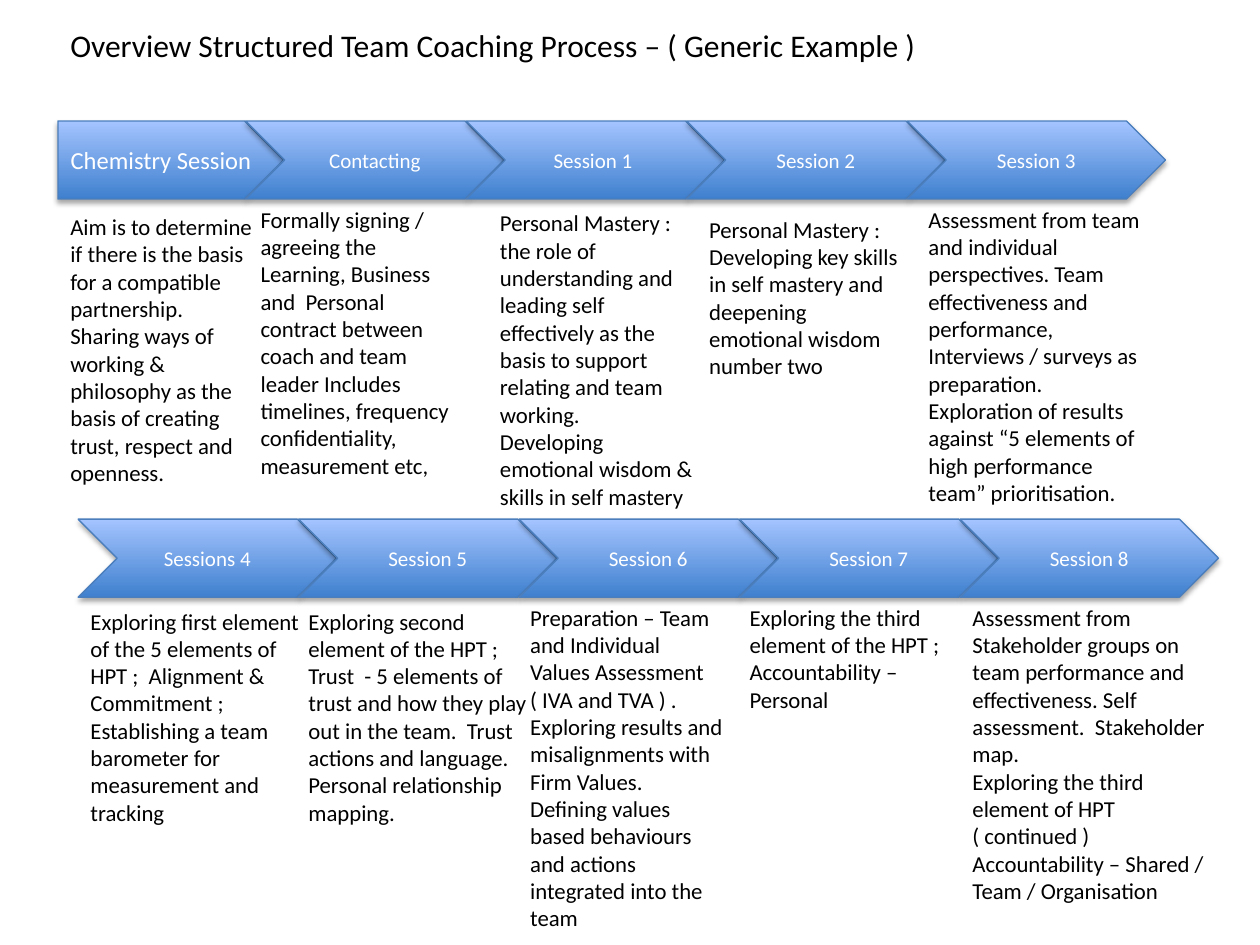
from lxml import etree
from pptx import Presentation
from pptx.dml.color import RGBColor
from pptx.enum.shapes import MSO_SHAPE
from pptx.enum.text import MSO_ANCHOR, MSO_AUTO_SIZE, PP_ALIGN
from pptx.oxml.ns import qn
from pptx.util import Inches, Pt

PENTAGON, CHEVRON = MSO_SHAPE.PENTAGON, MSO_SHAPE.CHEVRON
MIDDLE, CENTER = MSO_ANCHOR.MIDDLE, PP_ALIGN.CENTER
GROW = MSO_AUTO_SIZE.SHAPE_TO_FIT_TEXT

FONT = "Calibri"
COLORS = {
    "text": "000000",
    "label": "FFFFFF",
    "arrow_bottom": "3F80CE",
    "arrow_top": "A4C4FF",
    "outline": "4B7EBC",
    "shadow": "000000",
}

ARROW_WIDTH, ARROW_HEIGHT = 2.05, 0.62
ARROW_STEP = 1.75

# Each step: label, (left, top, width, height) of its description, paragraphs
FIRST_ROW = [
    ("Chemistry Session", (0.46, 1.64, 1.64, 2.51), [
        "Aim is to determine if there is the basis for a compatible partnership.  "
        "Sharing ways of working & philosophy as the basis of creating trust, "
        "respect and openness."]),
    ("Contacting", (1.97, 1.58, 1.73, 2.29), [
        "Formally signing / agreeing the Learning, Business and  Personal contract "
        "between coach and team leader Includes timelines, frequency "
        "confidentiality,  measurement etc,"]),
    ("Session 1 ", (3.87, 1.61, 1.73, 2.51), [
        "Personal Mastery :  the role of understanding and leading self effectively "
        "as the basis to support relating and team working.",
        "Developing emotional wisdom & skills in self mastery"]),
    ("Session 2", (5.53, 1.66, 1.73, 1.41), [
        "Personal Mastery :",
        "Developing key skills in self mastery and deepening emotional wisdom "
        "number two"]),
    ("Session 3", (7.27, 1.58, 1.92, 2.51), [
        "Assessment from team and individual perspectives. Team effectiveness and "
        "performance, Interviews / surveys as preparation.",
        "Exploration of results against “5 elements of high performance team” "
        "prioritisation."]),
]
SECOND_ROW = [
    ("Sessions 4", (0.62, 4.77, 1.87, 1.85), [
        "Exploring first element of the 5 elements of HPT ;  Alignment & "
        "Commitment ; Establishing a team barometer for measurement and tracking"]),
    ("Session 5", (2.35, 4.77, 1.94, 1.85), [
        "Exploring second element of the HPT ; Trust  - 5 elements of trust and how "
        "they play out in the team.  Trust actions and language.  Personal "
        "relationship mapping."]),
    ("Session 6", (4.11, 4.74, 1.73, 2.73), [
        "Preparation – Team and Individual Values Assessment ( IVA and TVA ) .  "
        "Exploring results and misalignments with Firm Values.  Defining values "
        "based behaviours and actions integrated into the team"]),
    ("Session 7", (5.85, 4.74, 1.75, 0.98), [
        "Exploring the third element of the HPT ; Accountability – Personal"]),
    ("Session 8", (7.62, 4.74, 2.04, 2.51), [
        "Assessment from Stakeholder groups on team performance and effectiveness. "
        "Self assessment.  Stakeholder map.",
        "Exploring the third element of HPT ( continued ) Accountability – Shared / "
        "Team / Organisation"]),
]


def color(name):
    return RGBColor.from_string(COLORS[name])


def style_paragraph(para, size, color_name):
    para.font.name = FONT
    para.font.size = Pt(size)
    para.font.color.rgb = color(color_name)


def add_text(page, place, paragraphs, size, wrap=True):
    box = page.shapes.add_textbox(*map(Inches, place))
    frame = box.text_frame
    frame.word_wrap = wrap
    frame.auto_size = GROW
    for index, text in enumerate(paragraphs):
        para = frame.add_paragraph() if index else frame.paragraphs[0]
        para.text = text
        style_paragraph(para, size, "text")


def add_shadow(shape):
    shape.shadow.inherit = False
    effects = shape._element.spPr.find(qn("a:effectLst"))
    shadow = etree.SubElement(
        effects, qn("a:outerShdw"), blurRad=str(Pt(3.1)), dist=str(Pt(1.8)),
        dir="5400000", rotWithShape="0")
    tone = etree.SubElement(shadow, qn("a:srgbClr"), val=COLORS["shadow"])
    etree.SubElement(tone, qn("a:alpha"), val="35000")


def add_arrow(page, kind, left, top, width, label, size):
    arrow = page.shapes.add_shape(
        kind, Inches(left), Inches(top), Inches(width), Inches(ARROW_HEIGHT))
    arrow.fill.gradient()
    arrow.fill.gradient_angle = 90
    for stop, name in zip(arrow.fill.gradient_stops, ("arrow_bottom", "arrow_top")):
        stop.color.rgb = color(name)
    arrow.line.color.rgb = color("outline")
    arrow.line.width = Pt(0.75)
    add_shadow(arrow)
    frame = arrow.text_frame
    frame.margin_left = frame.margin_right = Inches(0.05)
    frame.vertical_anchor = MIDDLE
    para = frame.paragraphs[0]
    para.text = label
    para.alignment = CENTER
    style_paragraph(para, size, "label")


def add_row(page, steps, left, top, starts_process=False):
    for index, (label, place, paragraphs) in enumerate(steps):
        if starts_process and index == 0:
            # The opening arrow has a flat back and a larger label
            add_arrow(page, PENTAGON, 0.46, top, 1.79, label, 14)
        else:
            add_arrow(page, CHEVRON, left + index * ARROW_STEP, top,
                      ARROW_WIDTH, label, 12)
        add_text(page, place, paragraphs, 13)


def main():
    deck = Presentation()
    deck.slide_width, deck.slide_height = Inches(10), Inches(7.5)
    page = deck.slides.add_slide(deck.slide_layouts[6])

    # Title
    add_text(page, (0.46, 0.16, 6.96, 0.4),
             ["Overview Structured Team Coaching Process – ( Generic Example )"],
             18, wrap=False)

    # Two rows of process steps
    add_row(page, FIRST_ROW, 0.2, 0.96, starts_process=True)
    add_row(page, SECOND_ROW, 0.62, 4.12)

    deck.save("out.pptx")


if __name__ == "__main__":
    main()
